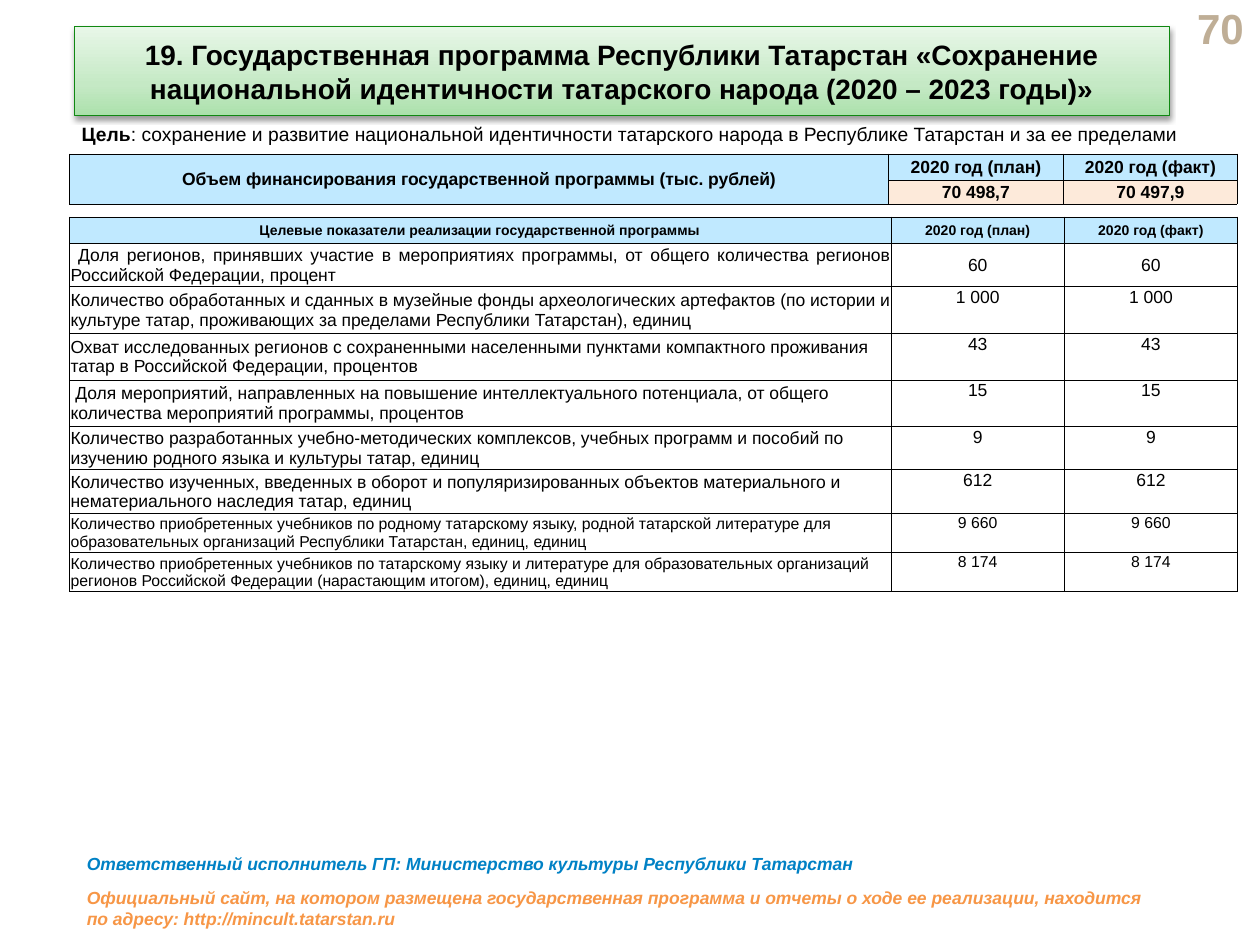
"""Builds the slide on the state programme for preserving Tatar national identity."""
from dataclasses import dataclass

from lxml import etree
from pptx import Presentation, util as u
from pptx.dml.color import RGBColor
from pptx.enum import text as t
from pptx.oxml import parse_xml
from pptx.oxml.ns import nsdecls, qn

LEFT, CENTER, RIGHT, JUSTIFY = (
    t.PP_ALIGN.LEFT, t.PP_ALIGN.CENTER, t.PP_ALIGN.RIGHT, t.PP_ALIGN.JUSTIFY)
TOP, MIDDLE = t.MSO_ANCHOR.TOP, t.MSO_ANCHOR.MIDDLE


@dataclass(frozen=True)
class Theme:
    font: str = "Arial"
    ink: str = "000000"
    header: str = "C0E9FF"
    value: str = "FDEADA"
    number: str = "BFAE96"
    owner: str = "0081C5"
    site: str = "F79646"
    border: str = "108812"
    gradient: tuple = ((0, "ABE1AB"), (35, "C5E9C5"), (100, "E8F7E8"))
    number_size: float = 24
    title_size: float = 16
    goal_size: float = 11
    body_size: float = 10
    small_size: float = 9
    label_size: float = 8


class Deck:
    """Holds the theme and the current slide on a grid of 100 columns by 75 rows."""

    def __init__(self, theme):
        self.theme = theme
        self.presentation = Presentation()
        self.presentation.slide_width = u.Inches(10)
        self.presentation.slide_height = u.Inches(7.5)
        self.column = self.presentation.slide_width / 100
        self.row = self.presentation.slide_height / 75
        self.slide = self.presentation.slides.add_slide(self.presentation.slide_layouts[5])

    def place(self, left, top, width, height):
        return (round(left * self.column), round(top * self.row),
                round(width * self.column), round(height * self.row))

    def style(self, paragraph, size, color, bold=False, italic=False, align=LEFT):
        paragraph.alignment = align
        font = paragraph.font
        font.name, font.size = self.theme.font, u.Pt(size)
        font.bold, font.italic = bold, italic
        font.color.rgb = RGBColor.from_string(color)

    def title(self, box, words):
        shape = self.slide.shapes.title
        shape.left, shape.top, shape.width, shape.height = self.place(*box)
        properties = shape._element.spPr
        stops = "".join(f'<a:gs pos="{position * 1000}"><a:srgbClr val="{color}"/></a:gs>'
                        for position, color in self.theme.gradient)
        for xml in (
            '<a:prstGeom {ns} prst="roundRect"><a:avLst/></a:prstGeom>',
            '<a:gradFill {ns} rotWithShape="1"><a:gsLst>' + stops +
            '</a:gsLst><a:lin ang="16200000" scaled="1"/></a:gradFill>',
        ):
            properties.append(parse_xml(xml.replace("{ns}", nsdecls("a"))))
        shape.line.color.rgb = RGBColor.from_string(self.theme.border)
        shape.line.width = u.Pt(0.75)
        properties.append(parse_xml(
            f'<a:effectLst {nsdecls("a")}><a:outerShdw blurRad="{u.Pt(3.1)}" '
            f'dist="{u.Pt(1.6)}" dir="5400000" rotWithShape="0"><a:srgbClr '
            f'val="{self.theme.ink}"><a:alpha val="38000"/></a:srgbClr>'
            '</a:outerShdw></a:effectLst>'))
        frame = shape.text_frame
        frame.text, frame.word_wrap = words, True
        frame.auto_size, frame.vertical_anchor = t.MSO_AUTO_SIZE.NONE, MIDDLE
        self.style(frame.paragraphs[0], self.theme.title_size, self.theme.ink,
                   bold=True, align=CENTER)

    def text(self, box, words, size, color, anchor=TOP, lead="", **look):
        frame = self.slide.shapes.add_textbox(*self.place(*box)).text_frame
        frame.word_wrap, frame.vertical_anchor = True, anchor
        paragraph = frame.paragraphs[0]
        if lead:
            run = paragraph.add_run()
            run.text, run.font.bold = lead, True
        paragraph.add_run().text = words
        self.style(paragraph, size, color, **look)

    def table(self, left, top, columns, rows):
        box = self.place(left, top, sum(columns), sum(rows))
        table = self.slide.shapes.add_table(len(rows), len(columns), *box).table
        table.first_row = table.horz_banding = False
        for column, width in zip(table.columns, columns):
            column.width = round(width * self.column)
        for row, height in zip(table.rows, rows):
            row.height = round(height * self.row)
        for cell in table.iter_cells():
            self.border(cell)
            cell.fill.background()
        return table

    def border(self, cell):
        properties = cell._tc.get_or_add_tcPr()
        for side in ("a:lnL", "a:lnR", "a:lnT", "a:lnB"):
            line = etree.SubElement(properties, qn(side), w=str(u.Pt(0.25)))
            fill = etree.SubElement(line, qn("a:solidFill"))
            etree.SubElement(fill, qn("a:srgbClr"), val=self.theme.ink)

    def cell(self, cell, words, size, fill=None, anchor=MIDDLE, margin=0.01, **look):
        cell.text, cell.vertical_anchor = words, anchor
        cell.margin_left = cell.margin_right = u.Inches(margin)
        cell.margin_top, cell.margin_bottom = u.Inches(0.01), 0
        if fill:
            cell.fill.solid()
            cell.fill.fore_color.rgb = RGBColor.from_string(fill)
        self.style(cell.text_frame.paragraphs[0], size, self.theme.ink, **look)


YEARS = ("2020 год (план)", "2020 год (факт)")
FUNDING = ("70 498,7", "70 497,9")
INDICATORS = (
    (" Доля регионов, принявших участие в мероприятиях программы, от общего количества "
     "регионов Российской Федерации, процент", "60"),
    ("Количество обработанных и сданных в музейные фонды археологических артефактов "
     "(по истории и культуре татар, проживающих за пределами Республики Татарстан), единиц",
     "1 000"),
    ("Охват исследованных регионов с сохраненными населенными пунктами компактного "
     "проживания татар в Российской Федерации, процентов", "43"),
    (" Доля мероприятий, направленных на повышение интеллектуального потенциала, от общего "
     "количества мероприятий программы, процентов", "15"),
    ("Количество разработанных учебно-методических комплексов, учебных программ и пособий "
     "по изучению родного языка и культуры татар, единиц", "9"),
    ("Количество изученных, введенных в оборот и популяризированных объектов материального "
     "и нематериального наследия татар, единиц", "612"),
    ("Количество приобретенных учебников по родному татарскому языку, родной татарской "
     "литературе для образовательных организаций Республики Татарстан, единиц, единиц",
     "9 660"),
    ("Количество приобретенных учебников по татарскому языку и литературе для "
     "образовательных организаций регионов Российской Федерации (нарастающим итогом), "
     "единиц, единиц", "8 174"),
)


def main():
    theme = Theme()
    deck = Deck(theme)
    heading = dict(fill=theme.header, bold=True, align=CENTER)

    deck.text((93.3, 0.5, 6.4, 3.4), "70", theme.number_size, theme.number,
              anchor=MIDDLE, bold=True, align=RIGHT)

    funding = deck.table(5.5, 12.2, (65, 13.9, 13.8), (2.1, 1.9))
    funding.cell(0, 0).merge(funding.cell(1, 0))
    deck.cell(funding.cell(0, 0), "Объем финансирования государственной программы (тыс. рублей)",
              theme.body_size, margin=0.06, **heading)
    for column, (year, amount) in enumerate(zip(YEARS, FUNDING), 1):
        deck.cell(funding.cell(0, column), year, theme.body_size, margin=0.06, **heading)
        deck.cell(funding.cell(1, column), amount, theme.body_size,
                  fill=theme.value, bold=True, align=CENTER)

    deck.text((5.5, 9.2, 92.7, 2.9),
              ": сохранение и развитие национальной идентичности татарского народа "
              "в Республике Татарстан и за ее пределами",
              theme.goal_size, theme.ink, anchor=MIDDLE, lead="Цель")
    deck.title((5.9, 2.1, 86.9, 7.1),
               "19. Государственная программа Республики Татарстан «Сохранение "
               "национальной идентичности татарского народа (2020 – 2023 годы)»")

    targets = deck.table(5.5, 17.2, (65.2, 13.8, 13.7),
                         (2.1, 3.4, 3.7, 3.7, 3.7, 3.4, 3.4, 3.1, 3))
    labels = ("Целевые показатели реализации государственной программы", *YEARS)
    for column, label in enumerate(labels):
        deck.cell(targets.cell(0, column), label, theme.label_size, **heading)
    for row, (indicator, value) in enumerate(INDICATORS, 1):
        size = theme.body_size if row < 7 else theme.small_size
        deck.cell(targets.cell(row, 0), indicator, size, align=JUSTIFY if row == 1 else LEFT)
        for column in (1, 2):
            deck.cell(targets.cell(row, column), value, size,
                      anchor=MIDDLE if row == 1 else TOP, align=CENTER)

    deck.text((5.9, 67.2, 95.2, 2.7),
              "Ответственный исполнитель ГП: Министерство культуры Республики Татарстан",
              theme.body_size, theme.owner, bold=True, italic=True)
    deck.text((5.9, 69.9, 85.9, 4.3),
              "Официальный сайт, на котором размещена государственная программа и отчеты "
              "о ходе ее реализации, находится по адресу: http://mincult.tatarstan.ru",
              theme.body_size, theme.site, bold=True, italic=True)

    deck.presentation.save("out.pptx")


if __name__ == "__main__":
    main()
